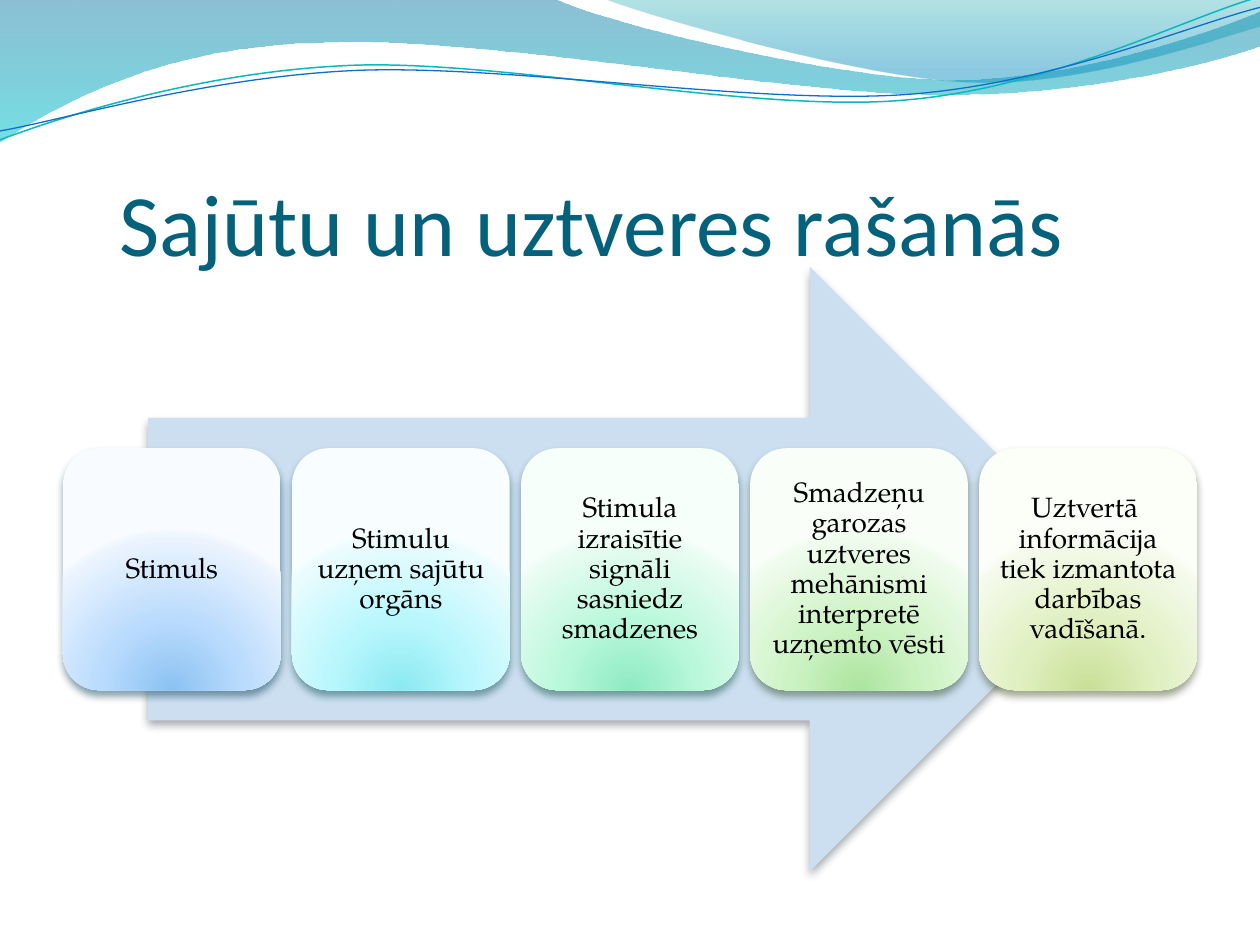
from lxml import etree
from pptx import Presentation
from pptx.dml.color import RGBColor
from pptx.enum.shapes import MSO_SHAPE
from pptx.enum.text import MSO_ANCHOR, PP_ALIGN
from pptx.oxml.ns import qn
from pptx.util import Cm, Pt

ARROW = MSO_SHAPE.RIGHT_ARROW
ROUND = MSO_SHAPE.ROUNDED_RECTANGLE
MIDDLE, BOTTOM = MSO_ANCHOR.MIDDLE, MSO_ANCHOR.BOTTOM
CENTER = PP_ALIGN.CENTER

BLACK = RGBColor(0x00, 0x00, 0x00)
TITLE = RGBColor(0x04, 0x61, 0x7B)
PALE = RGBColor(0xCC, 0xDF, 0xF1)
SLATE = RGBColor(0x47, 0x4E, 0x55)
DEEP = RGBColor(0x00, 0x74, 0xA1)
AQUA = RGBColor(0x00, 0xC6, 0xCF)
TEAL = RGBColor(0x00, 0xA1, 0xA9)
SKY = RGBColor(0x00, 0x8B, 0xBF)
CYAN = RGBColor(0x0A, 0xB8, 0xBF)
BLUE = RGBColor(0x0F, 0x6F, 0xC6)

# Text, shadow colour, gradient colours from the bottom glow outwards
STEPS = [
    ("Stimuls", "00374C", "8BC2F1 B9DBFD EAF3FE F8FBFF"),
    ("Stimulu uzņem sajūtu orgāns", "024B4E", "8BE9F1 B9F7FD EAFCFE F8FEFF"),
    ("Stimula izraisītie signāli sasniedz smadzenes", "044A37",
     "8DEAC2 BAF8DB EAFCF3 F7FFFB"),
    ("Smadzeņu garozas uztveres mehānismi interpretē uzņemto vēsti", "2B4821",
     "ACE49F CDF3C4 EFFBED F9FFF8"),
    ("Uztvertā  informācija tiek izmantota darbības vadīšanā.", "3A4519",
     "C9DF97 E0F0C1 F5FAEC FCFEF8"),
]
GLOW = (0, 43, 93, 100)

# Each segment lists its control points in cm: one for a line, three for a curve
BAND = [
    [(0, -0.03)],
    [(11.18, -0.03)],
    [(12.09, 0.43), (16.87, 1.6), (19.25, 1.6)],
    [(21.67, 1.6), (24.33, 0.66), (25.4, 0.23)],
    [(25.43, 0.91)],
    [(24.97, 1.12), (22.1, 1.93), (18.95, 1.91)],
    [(15.8, 1.91), (9.7, 0.71), (6.53, 0.86)],
    [(3.28, 0.89), (1.17, 2.11), (-0.03, 2.87)],
    [(0, -0.03)],
]
CREST = [
    [(12.17, -0.03)],
    [(12.93, 0.28), (17.32, 1.57), (19.53, 1.65)],
    [(21.74, 1.75), (24.41, 0.81), (25.4, 0.53)],
    [(25.4, 0)],
    [(12.17, -0.03)],
]
UPPER = [
    [(0, 2.82)],
    [(1.22, 2.36), (4.01, 1.45), (7.04, 1.32)],
    [(10.03, 1.19), (15.06, 2.26), (18.11, 2.03)],
    [(21.16, 1.8), (23.83, 0.38), (25.35, -0.05)],
]
LOWER = [
    [(0, 2.64)],
    [(1.19, 2.44), (4.17, 1.55), (7.19, 1.42)],
    [(10.24, 1.3), (15.16, 2.11), (18.21, 1.91)],
    [(21.23, 1.7), (23.9, 0.53), (25.4, 0.15)],
]


def add(parent, tag, **attrs):
    return etree.SubElement(parent, qn(tag), {k: str(v) for k, v in attrs.items()})


def shade(shape, stops, glow=False):
    """Fill with (position, colour, opacity) stops, downwards or as a glow from below."""
    shape.fill.background()
    props = shape._element.spPr
    grad = etree.Element(qn("a:gradFill"), rotWithShape="1")
    items = add(grad, "a:gsLst")
    for pos, color, alpha in stops:
        stop = add(items, "a:gs", pos=pos * 1000)
        tint = add(stop, "a:srgbClr", val=color)
        if alpha < 100:
            add(tint, "a:alpha", val=alpha * 1000)
    if glow:
        ring = add(grad, "a:path", path="circle")
        add(ring, "a:fillToRect", l=50000, t=130000, r=50000, b=-30000)
    else:
        add(grad, "a:lin", ang=90 * 60000, scaled=0)
    props.replace(props.find(qn("a:noFill")), grad)


def drop(shape, color):
    """Cast a soft shadow straight down."""
    shape.shadow.inherit = False
    effects = shape._element.spPr.find(qn("a:effectLst"))
    cast = add(effects, "a:outerShdw", blurRad=Pt(4.5), dist=Pt(3),
               dir=90 * 60000, rotWithShape=0)
    add(add(cast, "a:srgbClr", val=color), "a:alpha", val=48000)


def add_wave(slide, left, top, segments, close):
    """Lay lines through all control points, then bend each triple into a curve."""
    points = [(Cm(left + x), Cm(top + y)) for part in segments for x, y in part]
    pen = slide.shapes.build_freeform(*points[0])
    pen.add_line_segments(points[1:], close=close)
    wave = pen.convert_to_shape()
    wave.shadow.inherit = False

    lines = iter(list(wave._element.iter(qn("a:lnTo"))))
    for part in segments[1:]:
        group = [next(lines) for _ in part]
        if len(group) == 3:
            curve = etree.Element(qn("a:cubicBezTo"))
            group[0].addprevious(curve)
            for line in group:
                curve.append(line[0])
                line.getparent().remove(line)
    return wave


def add_header(slide, left, top):
    fills = [(BAND, [(0, DEEP, 45), (100, AQUA, 55)]),
             (CREST, [(0, TEAL, 30), (80, SKY, 45)])]
    for segments, stops in fills:
        wave = add_wave(slide, left, top, segments, True)
        shade(wave, stops)
        wave.line.fill.background()
    for segments, color, width in [(UPPER, CYAN, 0.85), (LOWER, BLUE, 0.75)]:
        wave = add_wave(slide, left, top, segments, False)
        wave.fill.background()
        wave.line.color.rgb = color
        wave.line.width = Pt(width)


def add_text(slide, box, text, name, size, color, inset, anchor):
    frame = slide.shapes.add_textbox(*map(Cm, box)).text_frame
    frame.word_wrap = True
    frame.vertical_anchor = anchor
    frame.margin_left = frame.margin_right = Cm(inset)
    frame.margin_top = frame.margin_bottom = Cm(inset)
    para = frame.paragraphs[0]
    para.text = text
    para.alignment = CENTER
    para.font.name = name
    para.font.size = Pt(size)
    para.font.color.rgb = color
    return frame


def add_title(slide, left, top, width, height):
    frame = add_text(slide, (left, top, width, height), "Sajūtu un uztveres rašanās",
                     "Calibri", 50, TITLE, 0, BOTTOM)
    frame.margin_left = Cm(2.42)


def add_process(slide, left, top, width, height):
    """Place a wide arrow with the steps in a row across its middle."""
    arrow = slide.shapes.add_shape(ARROW, Cm(left + 0.075 * width), Cm(top),
                                   Cm(0.85 * width), Cm(height))
    arrow.fill.solid()
    arrow.fill.fore_color.rgb = PALE
    arrow.line.fill.background()
    drop(arrow, SLATE)

    wide, high, pad = 4.39, 0.4 * height, 0.21
    pitch = (width - wide) / (len(STEPS) - 1)
    y = top + 0.3 * height
    for i, (text, dark, colors) in enumerate(STEPS):
        x = left + i * pitch
        card = slide.shapes.add_shape(ROUND, Cm(x), Cm(y), Cm(wide), Cm(high))
        shade(card, [(pos, c, 100) for pos, c in zip(GLOW, colors.split())], glow=True)
        card.line.fill.background()
        drop(card, dark)
        box = (x + pad, y + pad, wide - 2 * pad, high - 2 * pad)
        frame = add_text(slide, box, text, "TeX Gyre Pagella", 16, BLACK, 0.17, MIDDLE)
        frame.paragraphs[0].line_spacing = 0.9


def main():
    deck = Presentation()
    deck.slide_width, deck.slide_height = Cm(25.4), Cm(19.05)
    slide = deck.slides.add_slide(deck.slide_layouts[6])
    add_header(slide, 0, 0)
    add_title(slide, -0.71, 1.93, 22.86, 3.6)
    add_process(slide, 1.27, 5.38, 22.86, 12.19)
    deck.save("out.pptx")


if __name__ == "__main__":
    main()
